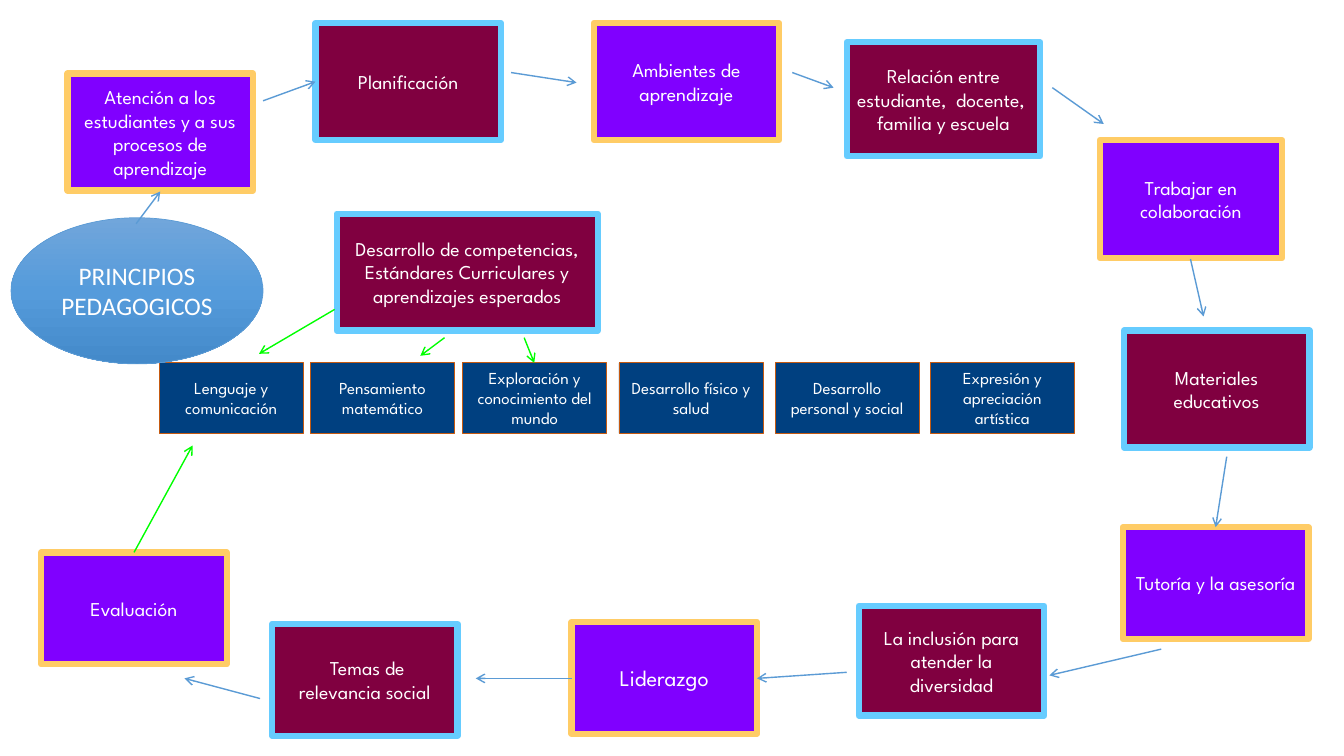
from dataclasses import dataclass

import pptx
import pptx.dml.color
import pptx.enum.shapes
import pptx.enum.text
import pptx.oxml
import pptx.oxml.ns
import pptx.util

# The page is a grid of tenths of an inch
COLUMNS, ROWS = 133.33, 75
CELL = pptx.util.Inches(0.1)
SHAPES = pptx.enum.shapes.MSO_SHAPE


@dataclass(frozen=True)
class Style:
    fill: str
    line: str
    line_width: float
    size: float = 14
    font: str = "League Spartan"


@dataclass(frozen=True)
class Node:
    text: str
    style: Style
    left: float
    top: float
    width: float = 18.4
    height: float = 11.1


@dataclass(frozen=True)
class Arrow:
    start: tuple[float, float]
    end: tuple[float, float]


VIOLET = Style("8000FF", "FFCC66", 4.5)
LEADER = Style("8000FF", "FFCC66", 4.5, 16)
WINE = Style("800040", "66CCFF", 4.5)
SUBJECT = Style("004080", "C55A11", 0.5, 12)
TITLE = Style("559BDB", "5B9BD5", 0.5, 18, "Calibri")

PRINCIPLES = [
    Node("Atención a los estudiantes y a sus procesos de aprendizaje",
         VIOLET, 6.7, 7.3, height=11.6),
    Node("Planificación", WINE, 31.3, 2.3, height=11.6),
    Node("Ambientes de aprendizaje", VIOLET, 58.9, 2.3, height=11.6),
    Node("Relación entre estudiante,  docente,  familia y escuela",
         WINE, 84, 4.2, 19.2, 11.3),
    Node("Trabajar en colaboración", VIOLET, 109.1, 13.9, 18.1, 11.7),
    Node("Materiales educativos", WINE, 111.5, 32.8, height=11.6),
    Node("Tutoría y la asesoría", VIOLET, 111.4, 52.3),
    Node("La inclusión para atender la diversidad", WINE, 85.2, 60.1, height=10.9),
    Node("Liderazgo", LEADER, 56.7, 61.7),
    Node(" Temas de relevancia social", WINE, 27, 61.9),
    Node("Evaluación", VIOLET, 4.1, 54.8),
    Node("Desarrollo de competencias, Estándares Curriculares y aprendizajes esperados",
         WINE, 33.4, 21.2, 25.9, 11.6),
]

SUBJECTS = {
    "Lenguaje y comunicación": 15.8,
    "Pensamiento matemático": 30.8,
    "Exploración y conocimiento del mundo": 45.9,
    "Desarrollo físico y salud": 61.4,
    "Desarrollo personal y social": 76.9,
    "Expresión y apreciación artística": 92.3,
}

HEADING = Node("PRINCIPIOS PEDAGOGICOS", TITLE, 1.1, 21.6, 25, 14.5)
HEADING_GRADIENT = {0: "71A6DB", 50: "559BDB", 100: "448ACA"}

ARROWS = {
    # Around the cycle of principles
    "5B9BD5": [
        Arrow((13.5, 22.2), (15.9, 19)),
        Arrow((26.1, 10), (31.3, 8.1)),
        Arrow((50.7, 7.2), (57.2, 8.2)),
        Arrow((78.6, 7.2), (82.7, 8.7)),
        Arrow((104.4, 8.7), (109.5, 12.3)),
        Arrow((118.1, 25.7), (119.4, 31.4)),
        Arrow((121.7, 45.3), (120.6, 52.3)),
        Arrow((115.2, 64.4), (104.1, 67)),
        Arrow((84, 66.7), (75.1, 67.3)),
        Arrow((56.7, 67.3), (47.2, 67.3)),
        Arrow((25.8, 69.3), (18.3, 67.3)),
    ],
    # Towards the subjects
    "00FF00": [
        Arrow((33.2, 30.7), (25.7, 35.1)),
        Arrow((44.1, 33.5), (41.7, 35.3)),
        Arrow((52, 33.5), (53, 36)),
        Arrow((13.3, 54.8), (19.1, 44.2)),
    ],
}


def cells(count: float) -> pptx.util.Emu:
    return pptx.util.Emu(round(count * CELL))


def colour(code: str) -> pptx.dml.color.RGBColor:
    return pptx.dml.color.RGBColor.from_string(code)


def draw_node(page, node: Node, kind=SHAPES.RECTANGLE):
    style = node.style
    box = page.shapes.add_shape(kind, cells(node.left), cells(node.top),
                                cells(node.width), cells(node.height))
    box.shadow.inherit = False
    box.fill.solid()
    box.fill.fore_color.rgb = colour(style.fill)
    box.line.color.rgb = colour(style.line)
    box.line.width = pptx.util.Pt(style.line_width)
    frame = box.text_frame
    frame.text = node.text
    frame.word_wrap = True
    frame.vertical_anchor = pptx.enum.text.MSO_ANCHOR.MIDDLE
    para = frame.paragraphs[0]
    para.alignment = pptx.enum.text.PP_ALIGN.CENTER
    for span in para.runs:
        span.font.name = style.font
        span.font.size = pptx.util.Pt(style.size)
        span.font.color.rgb = colour("FFFFFF")
    return box


def shade_downwards(box, stops: dict[int, str]) -> None:
    box.fill.gradient()
    box.fill.gradient_angle = 270
    stop_list = box._element.spPr.find(".//" + pptx.oxml.ns.qn("a:gsLst"))
    for stop in list(stop_list):
        stop_list.remove(stop)
    for percent, code in stops.items():
        stop_list.append(pptx.oxml.parse_xml(
            f'<a:gs {pptx.oxml.ns.nsdecls("a")} pos="{percent * 1000}">'
            f'<a:srgbClr val="{code}"/></a:gs>'))


def draw_arrow(page, arrow: Arrow, code: str) -> None:
    line = page.shapes.add_connector(
        pptx.enum.shapes.MSO_CONNECTOR.STRAIGHT,
        *map(cells, arrow.start + arrow.end))
    line.line.color.rgb = colour(code)
    line.line.width = pptx.util.Pt(1)
    namespace = pptx.oxml.ns.nsdecls("a")
    line.line._get_or_add_ln().append(
        pptx.oxml.parse_xml(f'<a:tailEnd {namespace} type="arrow"/>'))
    line._element.spPr.append(pptx.oxml.parse_xml(f"<a:effectLst {namespace}/>"))


def main() -> None:
    deck = pptx.Presentation()
    deck.slide_width, deck.slide_height = cells(COLUMNS), cells(ROWS)
    page = deck.slides.add_slide(deck.slide_layouts[6])

    # Principles and subjects
    for node in PRINCIPLES:
        draw_node(page, node)
    for text, left in SUBJECTS.items():
        draw_node(page, Node(text, SUBJECT, left, 36, 14.3, 7))

    # Heading ellipse
    heading = draw_node(page, HEADING, SHAPES.OVAL)
    shade_downwards(heading, HEADING_GRADIENT)

    # Arrows
    for code, arrows in ARROWS.items():
        for arrow in arrows:
            draw_arrow(page, arrow, code)

    deck.save("out.pptx")


if __name__ == "__main__":
    main()
